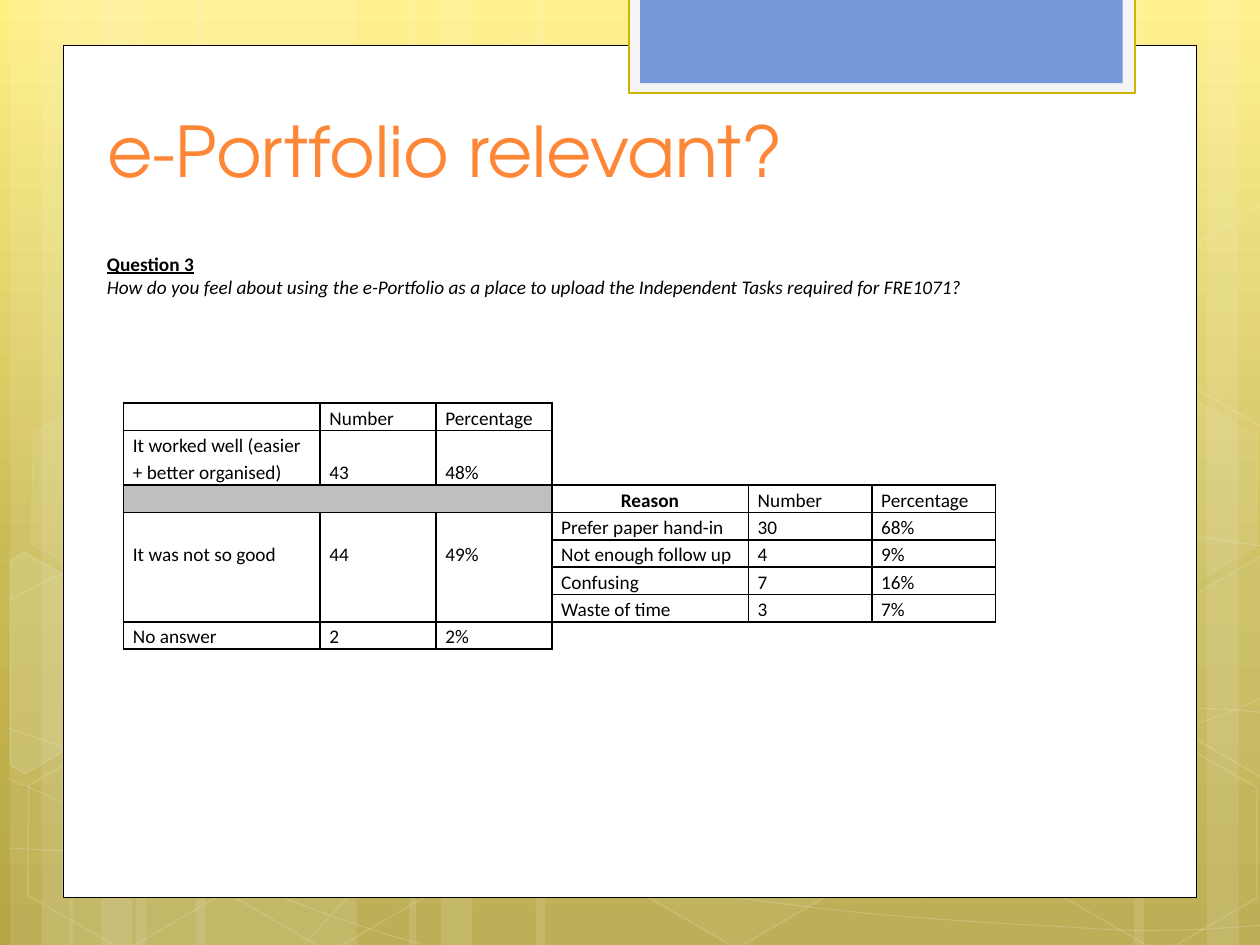
import copy
import math
import pptx
import pptx.dml.color
import pptx.enum.shapes
import pptx.enum.text
import pptx.oxml
import pptx.oxml.ns
import pptx.util

SHAPE = pptx.enum.shapes.MSO_SHAPE
ANCHOR = pptx.enum.text.MSO_ANCHOR
ALIGN = pptx.enum.text.PP_ALIGN
qn = pptx.oxml.ns.qn

BANDS = [(1.08, 1.75, 0), (0.08, 0.5, 0), (0.33, 0.83, 0), (1.55, 1.75, 0), (0.55, 0.5, 0), (0.8, 0.83, 0),
         (7.33, 1.75, 180), (9.58, 0.5, 180), (9, 0.83, 180), (4.25, 3.08, 0), (3.25, 0.5, 0), (3.5, 0.83, 0)]
CURVES = [
    [(0.07, 6.73), (0.61, 6.76), (1.15, 6.79), (1.9, 6.78), (2.65, 6.77), (3.58, 6.75), (4.58, 6.65),
     (5.58, 6.55), (7, 6.36), (7.92, 6.17), (8.83, 5.98), (9.77, 5.68), (10.07, 5.51)],
    [(0.07, 4.77), (0.36, 4.61), (0.65, 4.46), (1.21, 4.31), (1.78, 4.16), (2.59, 3.94), (3.47, 3.87),
     (4.36, 3.8), (5.44, 3.79), (6.54, 3.87), (7.64, 3.95), (9.47, 4.26), (10.07, 4.34)],
    [(0.06, 6.17), (1.27, 6.72), (2.47, 7.27), (3.34, 7.49)],
    [(0.07, 5.78), (0.38, 5.89), (0.7, 6), (1.28, 6.16), (1.86, 6.31), (2.73, 6.56), (3.57, 6.73),
     (4.4, 6.9), (5.45, 7.08), (6.28, 7.18), (7.11, 7.29), (8, 7.33), (8.53, 7.36),
     (9.05, 7.4), (9.19, 7.38), (9.45, 7.38), (9.71, 7.37), (9.89, 7.35), (10.07, 7.34)],
    [(2.42, 7.49), (2.6, 7.29), (2.78, 7.09), (3.02, 6.91), (3.26, 6.73), (3.6, 6.53), (3.88, 6.39),
     (4.16, 6.25), (4.33, 6.19), (4.7, 6.09), (5.06, 5.99), (5.73, 5.85), (6.08, 5.78),
     (6.44, 5.71), (6.49, 5.71), (6.8, 5.69), (7.11, 5.66), (7.6, 5.63), (7.94, 5.62),
     (8.29, 5.61), (8.86, 5.62), (8.86, 5.62), (9.08, 5.62), (9.31, 5.62), (9.53, 5.62),
     (9.71, 5.63), (9.88, 5.64), (9.97, 5.65), (10.06, 5.66), (10.03, 5.65), (10.06, 5.66)],
]
HEXAGONS = [(3.34, 0.36, 4, 8), (4.97, 5.89, 6, 12), (0.11, 5.91, 0, 12), (0.14, 3.12, 7, 8),
            (1.74, 5.92, 0, 12), (7.53, 4.53, 10, 12), (8.34, 5.93, 0, 12), (8.34, 3.14, 7, 8)]
CUT_HEXAGONS = [
    ((0.36, 5.35), 10, [(0.08, 4.45), (0.19, 4.38), (0.96, 4.82), (0.95, 5.7), (0.2, 6.14), (0.08, 6.07)]),
    ((9.85, 5.2), 4, [(9.26, 4.85), (10.01, 4.41), (10.09, 4.46), (10.09, 6.13), (10.02, 6.17), (9.26, 5.73)]),
    ((9.85, 2.41), 0, [(9.26, 2.07), (10.01, 1.63), (10.1, 1.68), (10.09, 3.35), (10.02, 3.39), (9.26, 2.95)]),
]
TILT = 30
COLUMNS = [1.56, 0.92, 0.92, 1.56, 0.98, 0.98]
ROW = pptx.util.Cm(0.55)
ANSWERS = [
    ["", "Number", "Percentage", "", "", ""],
    ["It worked well (easier + better organised)", "43", "48%", "", "", ""],
    ["", "", "", "Reason", "Number", "Percentage"],
    ["It was not so good", "44", "49%", "Prefer paper hand-in", "30", "68%"],
    ["", "", "", "Not enough follow up", "4", "9%"],
    ["", "", "", "Confusing", "7", "16%"],
    ["", "", "", "Waste of time", "3", "7%"],
    ["No answer", "2", "2%", "", "", ""],
]
MERGES = [(0, 3, 0, 5), (1, 3, 1, 5), (2, 0, 2, 2), (7, 3, 7, 5)] + [(3, c, 6, c) for c in range(3)]


def color(code):
    return pptx.dml.color.RGBColor.from_string(code)


def box(*inches):
    return [pptx.util.Cm(2.54 * value) for value in inches]


def paint(fill, code, opacity=100):
    if not opacity:
        fill.background()
        return
    fill.solid()
    fill.fore_color.rgb = color(code)
    if opacity < 100:
        tint = fill._xPr.find(qn("a:solidFill"))[0]
        tint.append(pptx.oxml.parse_xml(
            f'<a:alpha {pptx.oxml.ns.nsdecls("a")} val="{opacity * 1000}"/>'))


def style(shape, fill, opacity=100, line="FFFFFF", width=0, line_opacity=100):
    shape.shadow.inherit = False
    paint(shape.fill, fill, opacity)
    paint(shape.line.fill, line, line_opacity if width else 0)
    if width:
        shape.line.width = pptx.util.Pt(width)


def set_font(font, size, name, code):
    font.size, font.name = pptx.util.Pt(size), name
    font.color.rgb = color(code)


def outline(slide, points, close):
    corners = [box(*point) for point in points]
    builder = slide.shapes.build_freeform(*corners[0])
    builder.add_line_segments(corners[1:], close=close)
    return builder.convert_to_shape()


def add_curve(slide, knots):
    curve = outline(slide, knots, False)
    route = curve._element.find(".//" + qn("a:path"))
    segments = route.findall(qn("a:lnTo"))
    for first in range(0, len(segments), 3):
        bend = pptx.oxml.parse_xml(f'<a:cubicBezTo {pptx.oxml.ns.nsdecls("a")}/>')
        for segment in segments[first:first + 3]:
            bend.append(segment[0])
            route.remove(segment)
        route.append(bend)
    style(curve, "FFFFFF", 0, width=0.5, line_opacity=20)


def upright(point, center):
    dx, dy = point[0] - center[0], point[1] - center[1]
    cos, sin = math.cos(math.radians(TILT)), math.sin(math.radians(TILT))
    return center[0] + dx * cos + dy * sin, center[1] - dx * sin + dy * cos


def add_backdrop(slide, height):
    fill = slide.background.fill
    fill.gradient()
    fill.gradient_angle = 270
    stops = fill._fill._gradFill.find(qn("a:gsLst"))
    stops.append(copy.deepcopy(stops[-1]))
    for stop, (position, code) in zip(fill.gradient_stops, [(0, "FFF082"), (0.62, "C7B953"), (1, "B6A744")]):
        stop.position = position
        stop.color.rgb = color(code)
    for left, width, turn in BANDS:
        band = slide.shapes.add_shape(SHAPE.RECTANGLE, *box(left, 0, width, height))
        band.rotation = turn
        style(band, "FFFFFF", 10)
    for knots in CURVES:
        add_curve(slide, knots)
    for left, top, opacity, edge in HEXAGONS:
        hexagon = slide.shapes.add_shape(SHAPE.HEXAGON, *box(left, top, 1.75, 1.52))
        hexagon.adjustments[0] = 0.285
        hexagon.rotation = TILT
        style(hexagon, "FFFFFF", opacity, width=1, line_opacity=edge)
    for center, opacity, corners in CUT_HEXAGONS:
        cut = outline(slide, [upright(corner, center) for corner in corners], True)
        cut.rotation = TILT
        style(cut, "FFFFFF", opacity, width=1, line_opacity=12)


def add_panel(slide, left, top, width, height):
    sheet = slide.shapes.add_shape(SHAPE.RECTANGLE, *box(left, top, width, height))
    style(sheet, "FFFFFF", line="000000", width=0.5)
    tab_top = top - 0.38
    frame = slide.shapes.add_shape(SHAPE.RECTANGLE, *box(left + 4.49, tab_top, 4.02, 0.76))
    style(frame, "F5F5F5", line="CEB500", width=1.25)
    tab = slide.shapes.add_shape(SHAPE.RECTANGLE, *box(left + 4.58, tab_top, 3.83, 0.68))
    style(tab, "7598D9")


def add_title(slide, left, top, width, height):
    title = slide.shapes.title
    slide.shapes._spTree.append(title._element)
    title.left, title.top, title.width, title.height = box(left, top, width, height)
    title.text_frame.text = "e-Portfolio relevant?"
    title.text_frame.vertical_anchor = ANCHOR.BOTTOM
    heading = title.text_frame.paragraphs[0]
    heading.alignment = ALIGN.LEFT
    set_font(heading.font, 40, "TeX Gyre Adventor", "FE8637")


def set_borders(cell, sides):
    properties = cell._tc.get_or_add_tcPr()
    for position, side in enumerate("LRTB"):
        fill = '<a:solidFill><a:srgbClr val="000000"/></a:solidFill>' if side in sides else "<a:noFill/>"
        properties.insert(position, pptx.oxml.parse_xml(
            f'<a:ln{side} {pptx.oxml.ns.nsdecls("a")} w="12700">{fill}</a:ln{side}>'))


def fill_cell(cell, row, column, text):
    cell.margin_left = cell.margin_right = pptx.util.Cm(0.19)
    cell.margin_top = cell.margin_bottom = 0
    blank = row in (0, 1, 7) and column > 2
    paint(cell.fill, "BFBFBF", 100 if row == 2 and column < 3 else 0)
    edges = {0: "", 1: "B", 7: "T"}[row] + ("L" if column == 3 else "") if blank else "LRTB"
    set_borders(cell, edges)
    cell.text = text
    entry = cell.text_frame.paragraphs[0]
    entry.line_spacing = 1.15
    set_font(entry.font, 11, "Calibri", "000000")
    if not text:
        entry._p.get_or_add_endParaRPr().set("sz", "1100")
    if row == 1:
        cell.vertical_anchor = ANCHOR.BOTTOM
    if row == 3 and column < 3:
        cell.margin_top = ROW
    if text == "Reason":
        entry.alignment = ALIGN.CENTER
        entry.font.bold = True


def add_answers(slide, left, top):
    heights = [ROW * (2 if row == 1 else 1) for row in range(len(ANSWERS))]
    frame = slide.shapes.add_table(len(ANSWERS), len(COLUMNS), *box(left, top, sum(COLUMNS)), sum(heights))
    table = frame.table
    table.first_row = table.horz_banding = False
    for column, width in zip(table.columns, COLUMNS):
        column.width = box(width)[0]
    for row, height in zip(table.rows, heights):
        row.height = height
    for row, texts in enumerate(ANSWERS):
        for column, text in enumerate(texts):
            fill_cell(table.cell(row, column), row, column, text)
    for top_row, first, bottom_row, last in MERGES:
        table.cell(top_row, first).merge(table.cell(bottom_row, last))


def add_question(slide, left, top, width, height):
    text = slide.shapes.add_textbox(*box(left, top, width, height)).text_frame
    text.word_wrap = False
    text.auto_size = pptx.enum.text.MSO_AUTO_SIZE.SHAPE_TO_FIT_TEXT
    text.vertical_anchor = ANCHOR.MIDDLE
    text.text = ("Question 3\nHow do you feel about using the e-Portfolio as a place to upload "
                 "the Independent Tasks required for FRE1071?")
    label, question = text.paragraphs
    for line in (label, question):
        set_font(line.font, 11, "Calibri", "000000")
    label.font.bold = label.font.underline = True
    question.font.italic = True


def main():
    deck = pptx.Presentation()
    deck.slide_width, deck.slide_height = box(10, 7.5)
    slide = deck.slides.add_slide(deck.slide_layouts[5])
    add_backdrop(slide, 7.5)
    add_panel(slide, 0.5, 0.36, 9, 6.76)
    add_title(slide, 0.75, 0.76, 7.68, 0.81)
    add_answers(slide, 0.98, 3.2)
    add_question(slide, 0.75, 1.95, 7.05, 0.47)
    deck.save("out.pptx")


if __name__ == "__main__":
    main()
